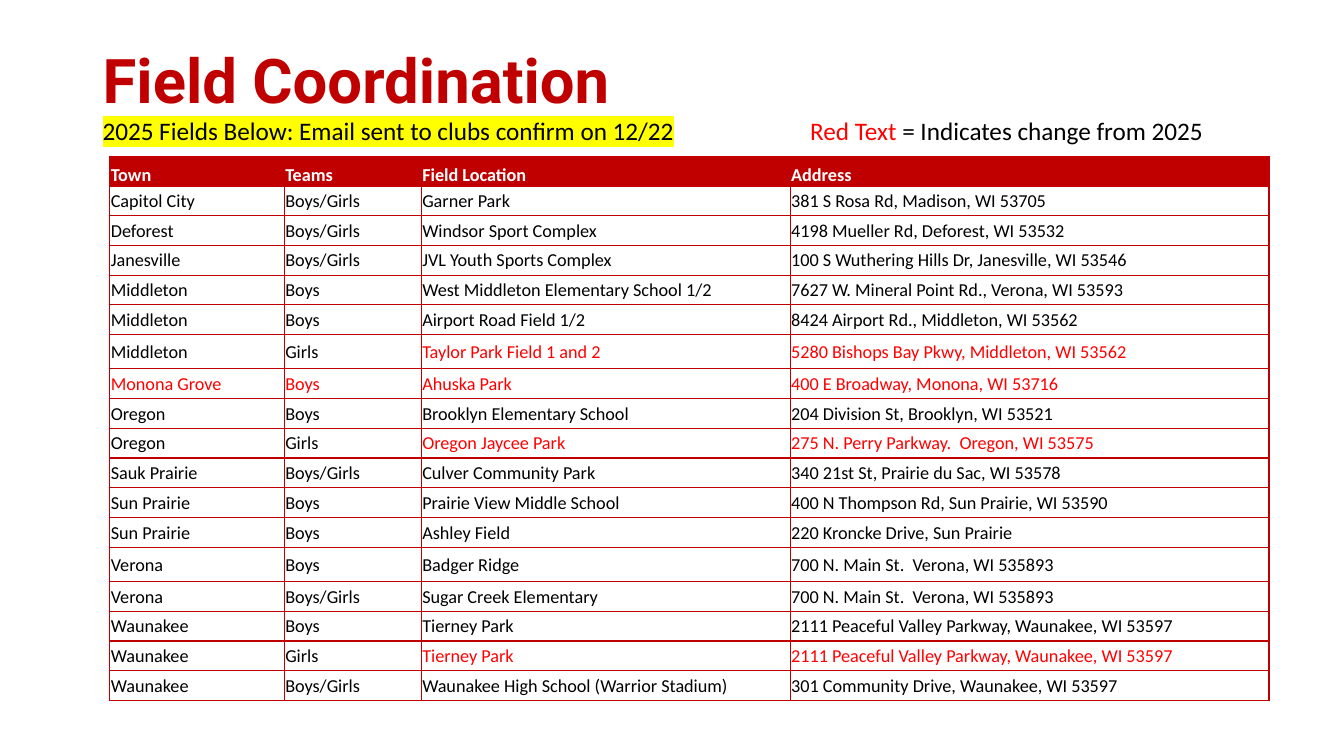
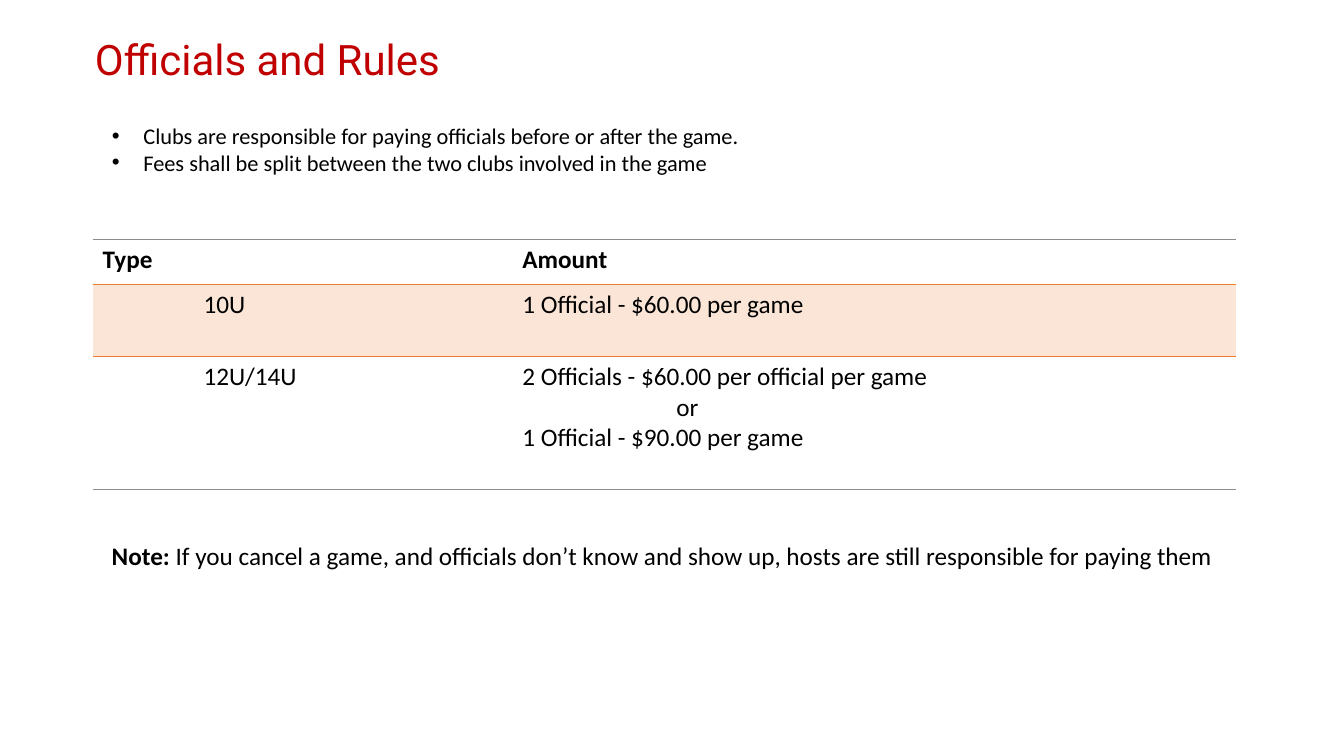
from dataclasses import dataclass

from lxml import etree
from pptx import Presentation
from pptx.dml.color import RGBColor
from pptx.enum.text import MSO_ANCHOR, MSO_AUTO_SIZE, PP_ALIGN
from pptx.oxml.ns import qn
from pptx.util import Pt

LEFT = PP_ALIGN.LEFT
TOP, MIDDLE, BOTTOM = MSO_ANCHOR.TOP, MSO_ANCHOR.MIDDLE, MSO_ANCHOR.BOTTOM
NO_AUTOFIT = MSO_AUTO_SIZE.NONE
CONTENT_LAYOUT, TITLE_ONLY_LAYOUT = 1, 5
PLAIN_TABLE_STYLE = "{2D5ABB26-0587-4C30-8999-92F81FD0307C}"


@dataclass(frozen=True)
class Theme:
    title_font: str = "Roboto"
    body_font: str = "Calibri"
    brand: str = "C00000"
    changed: str = "FF0000"
    text: str = "000000"
    inverse: str = "FFFFFF"
    highlight: str = "FFFF00"
    accent: str = "ED7D31"
    accent_tint: str = "FBE5D6"
    rule: str = "8C8C8C"
    large_title: int = 44
    title: int = 30
    body: int = 18
    list: int = 16
    table: int = 13


THEME = Theme()

FIELD_HEADER = ("Town", "Teams", "Field Location", "Address")
# The last value counts the changed cells, from the right.
FIELDS = (
    ("Capitol City", "Boys/Girls", "Garner Park", "381 S Rosa Rd, Madison, WI 53705", 0),
    ("Deforest", "Boys/Girls", "Windsor Sport Complex", "4198 Mueller Rd, Deforest, WI 53532", 0),
    ("Janesville", "Boys/Girls", "JVL Youth Sports Complex",
     "100 S Wuthering Hills Dr, Janesville, WI 53546", 0),
    ("Middleton", "Boys", "West Middleton Elementary School 1/2",
     "7627 W. Mineral Point Rd., Verona, WI 53593", 0),
    ("Middleton", "Boys", "Airport Road Field 1/2", "8424 Airport Rd., Middleton, WI 53562", 0),
    ("Middleton", "Girls", "Taylor Park Field 1 and 2",
     "5280 Bishops Bay Pkwy, Middleton, WI 53562", 2),
    ("Monona Grove", "Boys", "Ahuska Park", "400 E Broadway, Monona, WI 53716", 4),
    ("Oregon", "Boys", "Brooklyn Elementary School", "204 Division St, Brooklyn, WI 53521", 0),
    ("Oregon", "Girls", "Oregon Jaycee Park", "275 N. Perry Parkway.  Oregon, WI 53575", 2),
    ("Sauk Prairie", "Boys/Girls", "Culver Community Park",
     "340 21st St, Prairie du Sac, WI 53578", 0),
    ("Sun Prairie", "Boys", "Prairie View Middle School",
     "400 N Thompson Rd, Sun Prairie, WI 53590", 0),
    ("Sun Prairie", "Boys", "Ashley Field", "220 Kroncke Drive, Sun Prairie", 0),
    ("Verona", "Boys", "Badger Ridge", "700 N. Main St.  Verona, WI 535893", 0),
    ("Verona", "Boys/Girls", "Sugar Creek Elementary", "700 N. Main St.  Verona, WI 535893", 0),
    ("Waunakee", "Boys", "Tierney Park", "2111 Peaceful Valley Parkway, Waunakee, WI 53597", 0),
    ("Waunakee", "Girls", "Tierney Park", "2111 Peaceful Valley Parkway, Waunakee, WI 53597", 2),
    ("Waunakee", "Boys/Girls", "Waunakee High School (Warrior Stadium)",
     "301 Community Drive, Waunakee, WI 53597", 0),
)
TALL_FIELD_ROWS = (6, 13)

RULES = (
    "Clubs are responsible for paying officials before or after the game.",
    "Fees shall be split between the two clubs involved in the game",
)
# Each cell is a list of (text, left indent) paragraphs.
FEES = (
    ([("Type", 0)], [("Amount", 0)]),
    ([("10U", 72)], [("1 Official - $60.00 per game", 0)]),
    ([("12U/14U", 72)], [("2 Officials - $60.00 per official per game", 0), ("or", 110),
                         ("1 Official - $90.00 per game", 0)]),
)


def place(shape, left, top, width, height):
    shape.left, shape.top = Pt(left), Pt(top)
    shape.width, shape.height = Pt(width), Pt(height)


def add_run(paragraph, text, *, size=THEME.body, color=THEME.text, bold=False,
            font=THEME.body_font, highlight=None):
    run = paragraph.add_run()
    run.text = text
    run.font.size = Pt(size)
    run.font.bold = bold
    run.font.color.rgb = RGBColor.from_string(color)
    run.font.name = font
    if highlight:
        mark = etree.Element(qn("a:highlight"))
        etree.SubElement(mark, qn("a:srgbClr"), val=highlight)
        run.font._element.find(qn("a:latin")).addprevious(mark)


def set_indent(paragraph, left, first_line=0):
    properties = paragraph._p.get_or_add_pPr()
    properties.set("marL", str(Pt(left)))
    properties.set("indent", str(Pt(first_line)))


def set_title(slide, text, left, top, **run_format):
    title = slide.shapes.title
    place(title, left, top, 828, 104.4)
    frame = title.text_frame
    frame.auto_size = NO_AUTOFIT
    frame.vertical_anchor = MIDDLE
    paragraph = frame.paragraphs[0]
    paragraph.alignment = LEFT
    paragraph.line_spacing = 0.9
    add_run(paragraph, text, color=THEME.brand, font=THEME.title_font, **run_format)


def set_list(shape, items):
    frame = shape.text_frame
    frame.auto_size = NO_AUTOFIT
    frame.vertical_anchor = TOP
    for index, item in enumerate(items):
        paragraph = frame.add_paragraph() if index else frame.paragraphs[0]
        set_indent(paragraph, 22.5, -22.5)
        paragraph.space_before = Pt(0)
        add_run(paragraph, item, size=THEME.list)


def add_text_line(slide, left, top, width, runs):
    """Add a text box with one paragraph of (text, format) runs."""
    box = slide.shapes.add_textbox(Pt(left), Pt(top), Pt(width), Pt(29))
    box.text_frame.word_wrap = True
    for text, run_format in runs:
        add_run(box.text_frame.paragraphs[0], text, **run_format)


def add_plain_table(slide, left, top, widths, heights):
    frame = slide.shapes.add_table(len(heights), len(widths), Pt(left), Pt(top),
                                   Pt(sum(widths)), Pt(sum(heights)))
    table = frame.table
    table._tbl.tblPr.find(qn("a:tableStyleId")).text = PLAIN_TABLE_STYLE
    table.horz_banding = False
    for column, width in zip(table.columns, widths):
        column.width = Pt(width)
    for row, height in zip(table.rows, heights):
        row.height = Pt(height)
    return table


def format_cell(cell, fill=None, **borders):
    """Set the fill and the 1 pt borders, given as L, R, T or B = colour."""
    properties = cell._tc.get_or_add_tcPr()
    for side in "LRTB":
        if side in borders:
            line = etree.SubElement(properties, qn(f"a:ln{side}"), w=str(Pt(1)))
            solid = etree.SubElement(line, qn("a:solidFill"))
            etree.SubElement(solid, qn("a:srgbClr"), val=borders[side])
    if fill:
        cell.fill.solid()
        cell.fill.fore_color.rgb = RGBColor.from_string(fill)
    else:
        cell.fill.background()


def add_field_table(slide):
    heights = [24.5 if row in TALL_FIELD_ROWS else 21.24 for row in range(len(FIELDS) + 1)]
    table = add_plain_table(slide, 78.5, 111.6, (124.6, 97.9, 263.5, 342), heights)
    for row, (*texts, changed) in enumerate(((*FIELD_HEADER, 0), *FIELDS)):
        header = row == 0
        for column, text in enumerate(texts):
            cell = table.cell(row, column)
            cell.margin_left = cell.margin_right = cell.margin_top = Pt(0.7)
            cell.margin_bottom = Pt(0)
            cell.vertical_anchor = BOTTOM if header else MIDDLE
            format_cell(cell, THEME.brand if header else None,
                        **dict.fromkeys("LRTB", THEME.brand))
            if header:
                color = THEME.inverse
            else:
                color = THEME.changed if column >= len(texts) - changed else THEME.text
            add_run(cell.text_frame.paragraphs[0], text, size=THEME.table,
                    color=color, bold=header)


def add_fee_table(slide):
    row_looks = (
        {"T": THEME.rule, "B": THEME.accent},
        {"T": THEME.accent, "fill": THEME.accent_tint},
        {"B": THEME.rule},
    )
    table = add_plain_table(slide, 66.2, 171, (299.8, 516.8), (32.2, 51.4, 95))
    for row, (cells, look) in enumerate(zip(FEES, row_looks)):
        for column, lines in enumerate(cells):
            cell = table.cell(row, column)
            format_cell(cell, **look)
            frame = cell.text_frame
            for index, (text, indent) in enumerate(lines):
                paragraph = frame.add_paragraph() if index else frame.paragraphs[0]
                set_indent(paragraph, indent)
                add_run(paragraph, text, bold=row == 0)


def add_field_slide(presentation):
    slide = presentation.slides.add_slide(presentation.slide_layouts[TITLE_ONLY_LAYOUT])
    set_title(slide, "Field Coordination", 66.2, 7.2, size=THEME.large_title, bold=True)
    add_field_table(slide)
    add_text_line(slide, 66.2, 78.5, 492.5, [
        ("2025 Fields Below: Email sent to clubs confirm on 12/22",
         {"highlight": THEME.highlight})])
    add_text_line(slide, 571.7, 78.5, 368, [
        ("Red Text ", {"color": THEME.changed}),
        ("= Indicates change from 2025", {})])


def add_officials_slide(presentation):
    slide = presentation.slides.add_slide(presentation.slide_layouts[CONTENT_LAYOUT])
    set_title(slide, "Officials and Rules", 60.5, -8, size=THEME.title)
    rules = slide.placeholders[1]
    place(rules, 72.7, 83.5, 816.5, 46)
    set_list(rules, RULES)
    add_fee_table(slide)
    add_text_line(slide, 72.7, 382.3, 829.5, [
        ("Note: ", {"bold": True}),
        ("If you cancel a game, and officials don’t know and show up, "
         "hosts are still responsible for paying them", {})])


def main():
    presentation = Presentation()
    presentation.slide_width, presentation.slide_height = Pt(960), Pt(540)
    add_field_slide(presentation)
    add_officials_slide(presentation)
    presentation.save("out.pptx")


if __name__ == "__main__":
    main()
